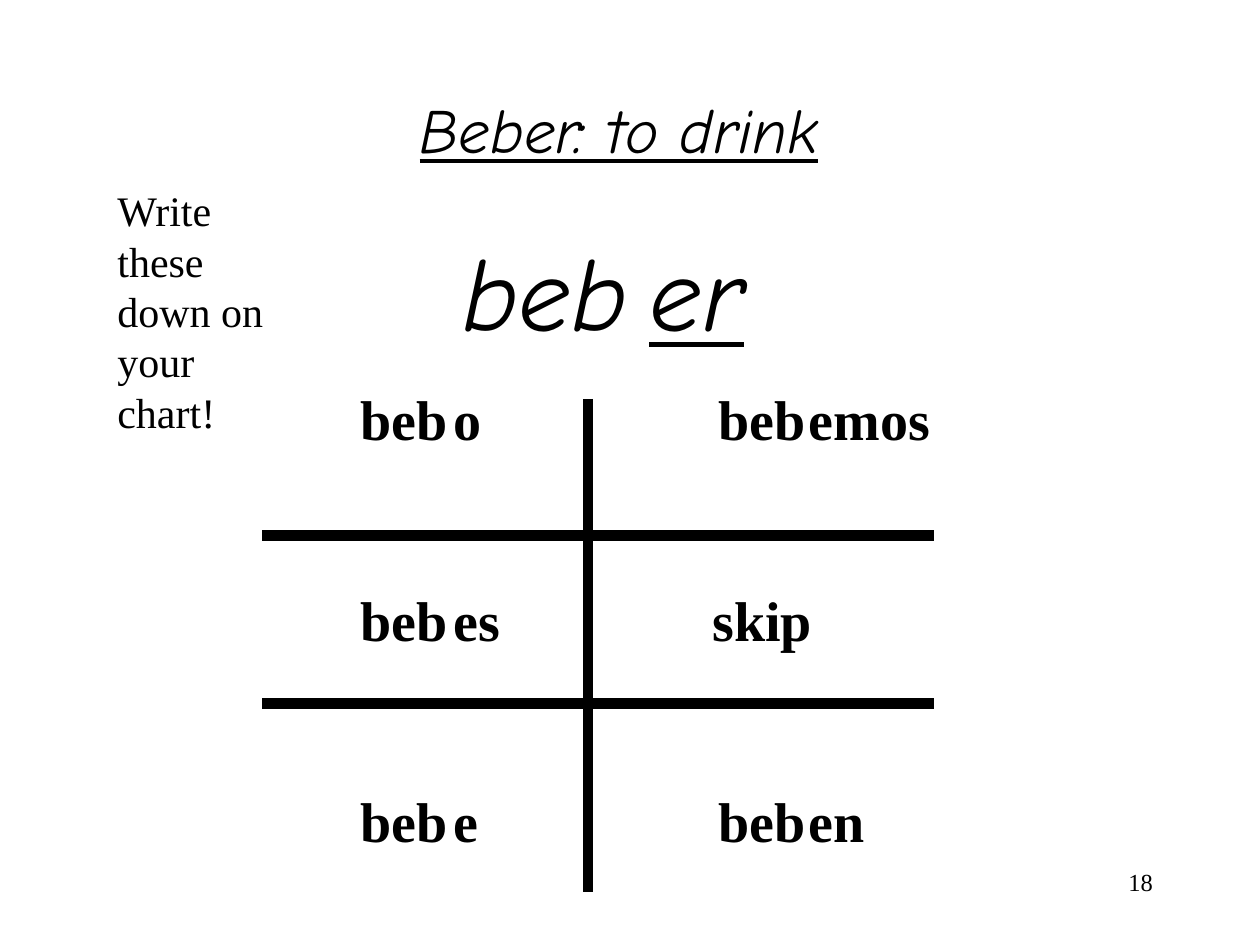
from pptx import Presentation
from pptx import util as u
from pptx.dml.color import RGBColor
from pptx.enum import shapes, text
from lxml import etree

Pt = u.Pt
BLACK = RGBColor(0, 0, 0)
LEFT, CENTER, RIGHT = text.PP_ALIGN.LEFT, text.PP_ALIGN.CENTER, text.PP_ALIGN.RIGHT
SERIF, HAND = "Times New Roman", "Comic Neue"
LINE_HEIGHT = 38.3  # one line of 32 pt text

deck = Presentation()
deck.slide_width, deck.slide_height = Pt(720), Pt(540)
page = deck.slides.add_slide(deck.slide_layouts[6])


def add_text(bounds, lines, size, font=SERIF, align=LEFT, wrap=False, gap=0, **style):
    """Add a text box with one paragraph per line and a gap in points between them."""
    box = page.shapes.add_textbox(*map(Pt, bounds))
    frame = box.text_frame
    frame.word_wrap = wrap
    for index, line in enumerate(lines):
        para = frame.paragraphs[0] if index == 0 else frame.add_paragraph()
        para.text = line
        para.alignment = align
        if index:
            para.space_before = Pt(gap)
        para.font.name, para.font.size = font, Pt(size)
        para.font.color.rgb = BLACK
        for name, value in style.items():
            setattr(para.font, name, value)


add_text((516, 492, 150, 36), ["18"], 14, align=RIGHT)
add_text((204, 48, 270.5, 50.4), ["Beber: to drink"], 36, HAND, RIGHT,
         italic=True, underline=True)
add_text((252, 126, 119, 79), ["beb"], 60, HAND, CENTER, italic=True)
add_text((360, 126, 76, 79), ["er"], 60, HAND, CENTER, italic=True, underline=True)

# Stems and endings: left, width, alignment, words, lines skipped between words
columns = [
    (199, 64, CENTER, ["beb", "beb", "beb"], 2),
    (399.6, 72, CENTER, ["beb", "skip", "beb"], 2),
    (252, 41, LEFT, ["o", "es", "e"], 2),
    (455, 84, LEFT, ["emos", "en"], 5),
]
for left, width, align, words, skipped in columns:
    add_text((left, 216, width, 276), words, 32, align=align,
             gap=skipped * LINE_HEIGHT, bold=True)

# Conjugation grid
for ends in [(336, 228, 336, 510), (150, 306, 534, 306), (150, 402, 534, 402)]:
    rule = page.shapes.add_connector(shapes.MSO_CONNECTOR.STRAIGHT, *map(Pt, ends))
    rule.line.color.rgb = BLACK
    rule.line.width = Pt(6)
    etree.SubElement(rule._element.spPr,
                     "{http://schemas.openxmlformats.org/drawingml/2006/main}effectLst")

add_text((60, 102, 114, 151), ["Write these down on your chart!"], 24, wrap=True)

deck.save("out.pptx")
